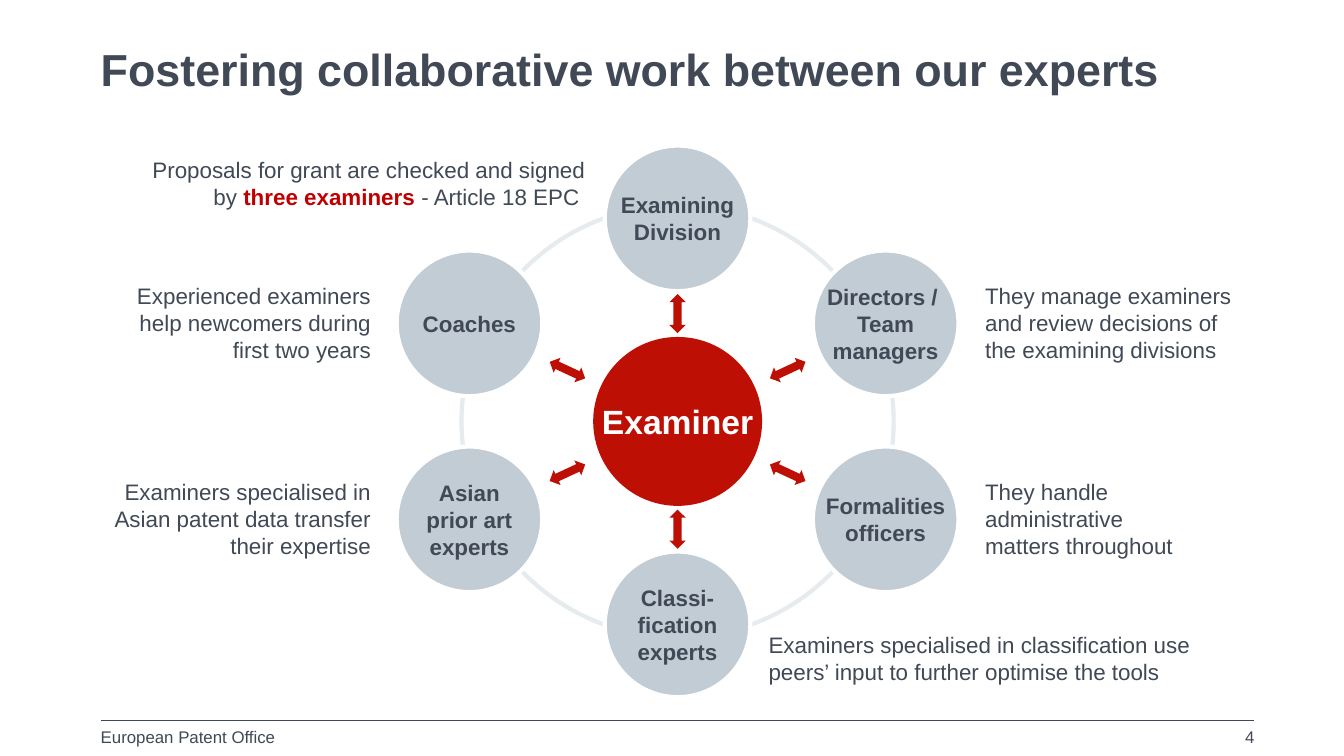
"""Builds a slide showing the examiner at the hub of six collaborating roles."""
from lxml import etree
from pptx import Presentation
from pptx.dml.color import RGBColor
from pptx.enum import shapes, text
from pptx.oxml import ns
from pptx.util import Pt

INK, RED, ACCENT = "404955", "BE0F05", "C00000"
GREY, PALE, WHITE = "C1CCD5", "E6EBEE", "FFFFFF"
LEFT, CENTER, RIGHT = text.PP_ALIGN.LEFT, text.PP_ALIGN.CENTER, text.PP_ALIGN.RIGHT
TOP, MIDDLE = text.MSO_ANCHOR.TOP, text.MSO_ANCHOR.MIDDLE


def paint(fill, color):
    fill.solid()
    fill.fore_color.rgb = RGBColor.from_string(color)


def write(holder, runs, size, align, anchor, inset, wrap=True):
    frame = holder.text_frame
    frame.word_wrap = wrap
    frame.vertical_anchor = anchor
    frame.margin_left = frame.margin_right = Pt(inset)
    frame.margin_top = frame.margin_bottom = Pt(inset)
    paragraph = frame.paragraphs[0]
    paragraph.alignment = align
    for words, color, bold in runs:
        for number, line in enumerate(words.split("\n")):
            if number:
                paragraph.add_line_break()
            run = paragraph.add_run()
            run.text = line
            run.font.name = "Arial"
            run.font.size = Pt(size)
            run.font.bold = bold
            paint(run.font.fill, color)


deck = Presentation()
deck.slide_width, deck.slide_height = Pt(720), Pt(405)
slide = deck.slides.add_slide(deck.slide_layouts[6])
canvas = slide.shapes

rule = canvas.add_connector(shapes.MSO_CONNECTOR.STRAIGHT, Pt(54), Pt(386), Pt(672), Pt(386))
paint(rule.line.fill, INK)
rule.line.width = Pt(0.75)
etree.SubElement(rule._element.spPr, ns.qn("a:effectLst"))

hub_x, hub_y = 363, 225.75
ring_size = 231.5
ring = canvas.add_shape(
    shapes.MSO_SHAPE.OVAL, Pt(hub_x - ring_size / 2), Pt(hub_y - ring_size / 2),
    Pt(ring_size), Pt(ring_size))
ring.shadow.inherit = False
ring.fill.background()
paint(ring.line.fill, PALE)
ring.line.width = Pt(2.25)

page_texts = [
    ("Fostering collaborative work between our experts", 54, 21, 618, 31.5, 24, True, LEFT, MIDDLE),
    ("European Patent Office", 54, 389.5, 122, 13.5, 9, False, LEFT, TOP),
    ("4", 626.5, 389.5, 45.5, 13.5, 9, False, RIGHT, TOP),
]
for words, left, top, width, height, size, bold, align, anchor in page_texts:
    box = canvas.add_textbox(Pt(left), Pt(top), Pt(width), Pt(height))
    write(box, [(words, INK, bold)], size, align, anchor, 0)

upper_row, lower_row = 145.5, 250.5
captions = [
    (53.5, 78, 252.5, 40, RIGHT, None),
    (53.5, upper_row, 151, 54.5, RIGHT,
     "Experienced examiners help newcomers during first two years"),
    (53.5, lower_row, 151, 54.5, RIGHT,
     "Examiners specialised in Asian patent data transfer their expertise"),
    (522, upper_row, 150, 54.5, LEFT,
     "They manage examiners and review decisions of the examining divisions"),
    (522, lower_row, 150, 54.5, LEFT, "They handle administrative\nmatters throughout"),
    (406, 332.5, 252, 40, LEFT,
     "Examiners specialised in classification use peers’ input to further optimise the tools"),
]
signing_rule = [
    ("Proposals for grant are checked and signed by ", INK, False),
    ("three examiners ", ACCENT, True),
    ("- Article 18 EPC ", INK, False),
]
for left, top, width, height, align, words in captions:
    if words is None:
        left, runs = 67, signing_rule
    else:
        runs = [(words, INK, False)]
    caption = canvas.add_textbox(Pt(left), Pt(top), Pt(width), Pt(height))
    write(caption, runs, 12, align, MIDDLE, 5.75)

role_size, role_dx, role_dy, pole_dy = 78, 111.5, 52.5, 108.75
circles = [
    ("Examiner", 0, 0, 90.5, RED, WHITE, 18),
    ("Examining\nDivision", 0, -pole_dy, role_size, GREY, INK, 12),
    ("Classi-\nfication\nexperts", 0, pole_dy, role_size, GREY, INK, 12),
    ("Directors / \nTeam\nmanagers", role_dx, -role_dy, role_size, GREY, INK, 12),
    ("Coaches", -role_dx, -role_dy, role_size, GREY, INK, 12),
    ("Formalities\nofficers", role_dx, role_dy, role_size, GREY, INK, 12),
    ("Asian\nprior art\nexperts", -role_dx, role_dy, role_size, GREY, INK, 12),
]
for words, dx, dy, size, color, ink, font_size in circles:
    circle = canvas.add_shape(
        shapes.MSO_SHAPE.OVAL, Pt(hub_x + dx - size / 2), Pt(hub_y + dy - size / 2),
        Pt(size), Pt(size))
    circle.shadow.inherit = False
    paint(circle.fill, color)
    if color == RED:
        circle.line.fill.background()
    else:
        paint(circle.line.fill, WHITE)
        circle.line.width = Pt(2.25)
    write(circle, [(words, ink, True)], font_size, CENTER, MIDDLE, 2.75, wrap=False)

arrow_width, arrow_height = 8.75, 21
arrows = [
    (0, -57.75, 0), (0, 57.75, 0),
    (59, -27.5, 65), (-59, -27.5, 295),
    (59, 27.5, 295), (-59, 27.5, 65),
]
for dx, dy, angle in arrows:
    arrow = canvas.add_shape(
        shapes.MSO_SHAPE.UP_DOWN_ARROW, Pt(hub_x + dx - arrow_width / 2),
        Pt(hub_y + dy - arrow_height / 2), Pt(arrow_width), Pt(arrow_height))
    arrow.rotation = angle
    arrow.shadow.inherit = False
    paint(arrow.fill, RED)
    arrow.line.fill.background()

deck.save("out.pptx")
